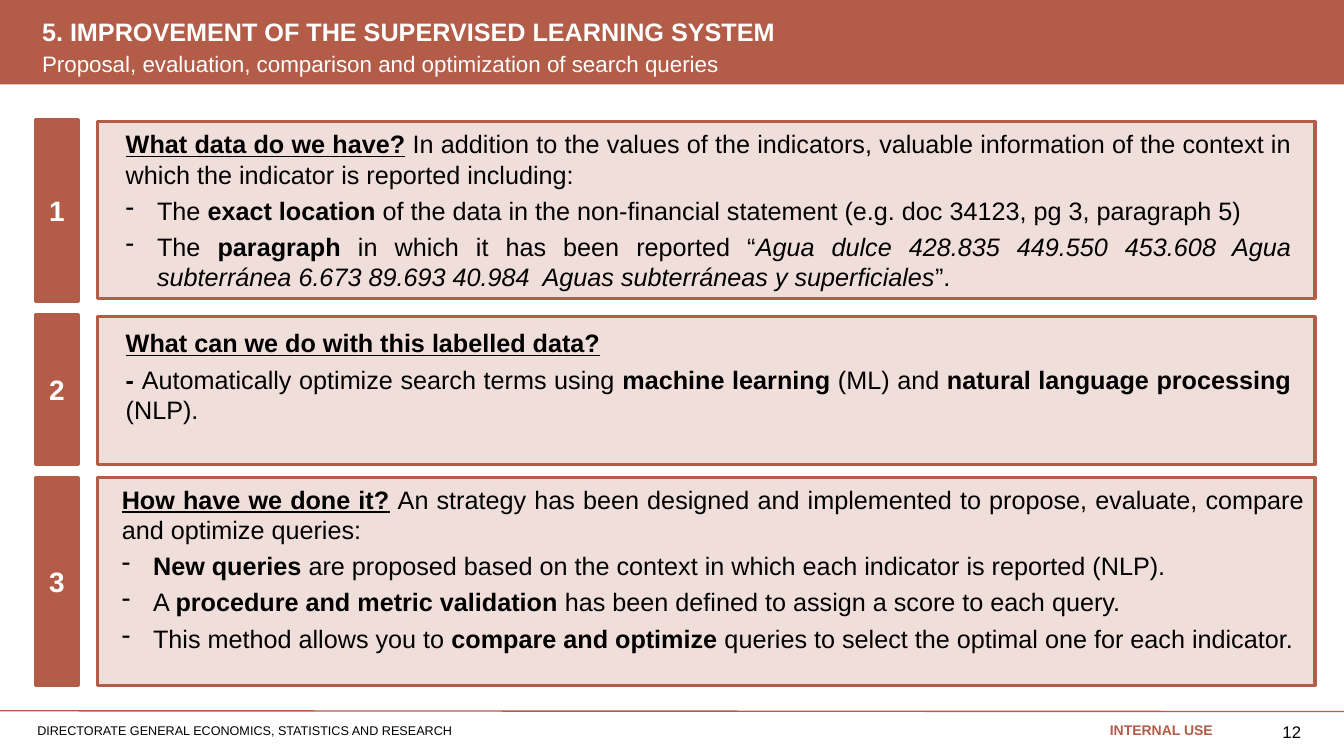
"""Build the slide on improving the supervised learning system."""
from lxml import etree
from pptx import Presentation
from pptx.dml.color import RGBColor
from pptx.enum.shapes import MSO_CONNECTOR, MSO_SHAPE
from pptx.enum.text import MSO_ANCHOR, PP_ALIGN
from pptx.oxml.ns import qn
from pptx.util import Cm, Pt

RECTANGLE = MSO_SHAPE.RECTANGLE
STRAIGHT = MSO_CONNECTOR.STRAIGHT
TOP, MIDDLE = MSO_ANCHOR.TOP, MSO_ANCHOR.MIDDLE
LEFT, RIGHT = PP_ALIGN.LEFT, PP_ALIGN.RIGHT
CENTER, JUSTIFY = PP_ALIGN.CENTER, PP_ALIGN.JUSTIFY
RUST = RGBColor(0xB3, 0x5C, 0x48)
BLUSH = RGBColor(0xF0, 0xDE, 0xDA)
WHITE = RGBColor(0xFF, 0xFF, 0xFF)
BLACK = RGBColor(0x00, 0x00, 0x00)
INDENT = Cm(0.79)


def add_rectangle(left, top, width, height, fill, outlined=True):
    box = page.shapes.add_shape(RECTANGLE, Cm(left), Cm(top), Cm(width), Cm(height))
    box.shadow.inherit = False
    box.fill.solid()
    box.fill.fore_color.rgb = fill
    if outlined:
        box.line.color.rgb = RUST
        box.line.width = Pt(2.25)
    else:
        box.line.fill.background()
    return box


def set_font(para, size, color, bold=None):
    para.font.name = "Arial"
    para.font.size = Pt(size)
    para.font.color.rgb = color
    para.font.bold = bold


deck = Presentation()
deck.slide_width, deck.slide_height = Cm(33.87), Cm(19.05)
page = deck.slides.add_slide(deck.slide_layouts[6])

add_rectangle(0, 0, 33.87, 2.13, RUST, outlined=False)
footer_rule = page.shapes.add_connector(STRAIGHT, 0, Cm(17.91), Cm(33.87), Cm(17.93))
footer_rule.line.color.rgb = RUST
footer_rule.line.width = Pt(1)
etree.SubElement(footer_rule._element.spPr, qn("a:effectLst"))

labels = [
    ("5. IMPROVEMENT OF THE SUPERVISED LEARNING SYSTEM",
     0.81, 0.38, 23.6, 0.79, 18, WHITE, True, LEFT, 0.9, TOP),
    ("Proposal, evaluation, comparison and optimization of search queries",
     0.81, 1.22, 23.6, 0.79, 16, WHITE, False, LEFT, 0.9, TOP),
    ("DIRECTORATE GENERAL ECONOMICS, STATISTICS AND RESEARCH",
     0.69, 18.14, 19.84, 0.71, 9, BLACK, False, LEFT, 0.9, TOP),
    ("INTERNAL USE", 24.94, 18.06, 5.87, 0.81, 10, RUST, True, RIGHT, 1.0, TOP),
    ("12", 31.04, 18.01, 1.75, 0.84, 12, BLACK, False, RIGHT, 1.0, MIDDLE),
]
for text, left, top, width, height, size, color, bold, align, spacing, anchor in labels:
    box = page.shapes.add_textbox(Cm(left), Cm(top), Cm(width), Cm(height))
    frame = box.text_frame
    frame.word_wrap = True
    frame.vertical_anchor = anchor
    if text == "12":
        frame.margin_right = 0
    para = frame.paragraphs[0]
    para.text = text
    para.alignment = align
    para.line_spacing = spacing
    set_font(para, size, color, bold)

sections = [
    ((3.02, 4.57), (3.07, 4.45), (2.92, 3.12, 29.87, 4.47), [
        (False, [("What data do we have?", "bu"), (" ", "b"),
                 ("In addition to the values of the indicators, valuable information of "
                  "the context in which the indicator is reported including:", "")]),
        (True, [("The ", ""), ("exact location ", "b"),
                ("of the data in the non-financial statement "
                 "(e.g. doc 34123, pg 3, paragraph 5)", "")]),
        (True, [("The ", ""), ("paragraph ", "b"), ("in which it has been reported “", ""),
                ("Agua dulce 428.835 449.550 453.608 Agua subterránea 6.673 89.693 40.984  "
                 "Aguas subterráneas y superficiales", "i"), ("”.", "")]),
    ]),
    ((7.92, 3.78), (7.98, 3.73), (2.92, 8.13, 29.87, 3.61), [
        (False, [("What can we do with this labelled data?", "bu")]),
        (False, [("- ", "b"), ("Automatically optimize search terms using ", ""),
                 ("machine learning ", "b"), ("(ML) and ", ""),
                 ("natural language processing ", "b"), ("(NLP).", "")]),
    ]),
    ((12.04, 5.23), (12.04, 5.23), (2.82, 12.07, 30.3, 4.65), [
        (False, [("How have we done it?", "bu"), (" ", "b"),
                 ("An strategy has been designed and implemented to propose, evaluate, "
                  "compare and optimize queries:", "")]),
        (True, [("New queries ", "b"),
                ("are proposed based on the context in which each indicator is "
                 "reported (NLP).", "")]),
        (True, [("A ", ""), ("procedure and metric validation ", "b"),
                ("has been defined to assign a score to each query.", "")]),
        (True, [("This method allows you to ", ""), ("compare and optimize ", "b"),
                ("queries to select the optimal one for each indicator.", "")]),
    ]),
]
for number, (tab, panel, text_area, paragraphs) in enumerate(sections, 1):
    add_rectangle(2.46, panel[0], 30.68, panel[1], BLUSH)
    tab_box = add_rectangle(0.89, tab[0], 1.09, tab[1], RUST)
    tab_box.text_frame.vertical_anchor = MIDDLE
    tab_box.text_frame.margin_left = tab_box.text_frame.margin_right = 0
    para = tab_box.text_frame.paragraphs[0]
    para.text = str(number)
    para.alignment = CENTER
    set_font(para, 20, WHITE, True)

    frame = page.shapes.add_textbox(*map(Cm, text_area)).text_frame
    frame.word_wrap = True
    for index, (bulleted, spans) in enumerate(paragraphs):
        para = frame.add_paragraph() if index else frame.paragraphs[0]
        para.alignment = JUSTIFY
        para.space_after = Pt(4.3)
        if bulleted:
            properties = para._p.get_or_add_pPr()
            properties.set("marL", str(INDENT))
            properties.set("indent", str(-INDENT))
            etree.SubElement(properties, qn("a:buChar"), char="-")
        set_font(para, 18, BLACK)
        for text, style in spans:
            span = para.add_run()
            span.text = text
            if "b" in style:
                span.font.bold = True
            if "u" in style:
                span.font.underline = True
            if "i" in style:
                span.font.italic = True

deck.save("out.pptx")
